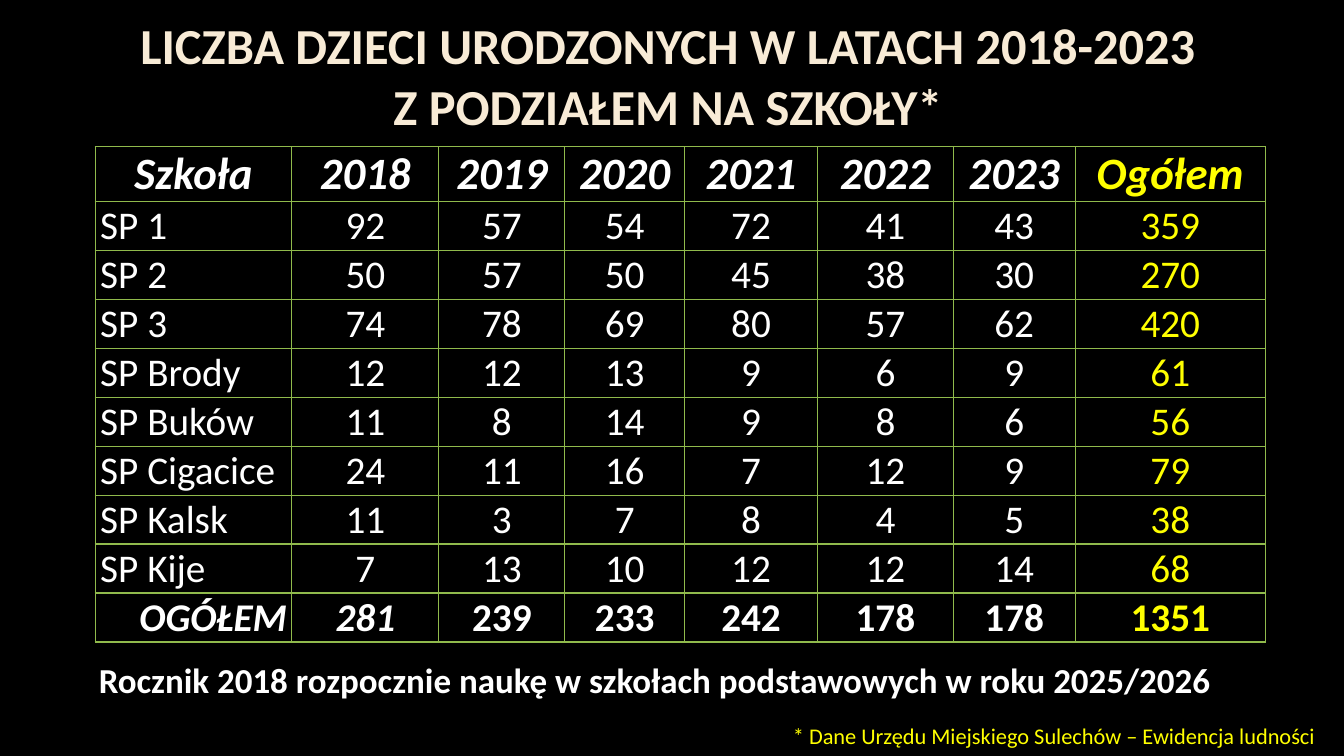
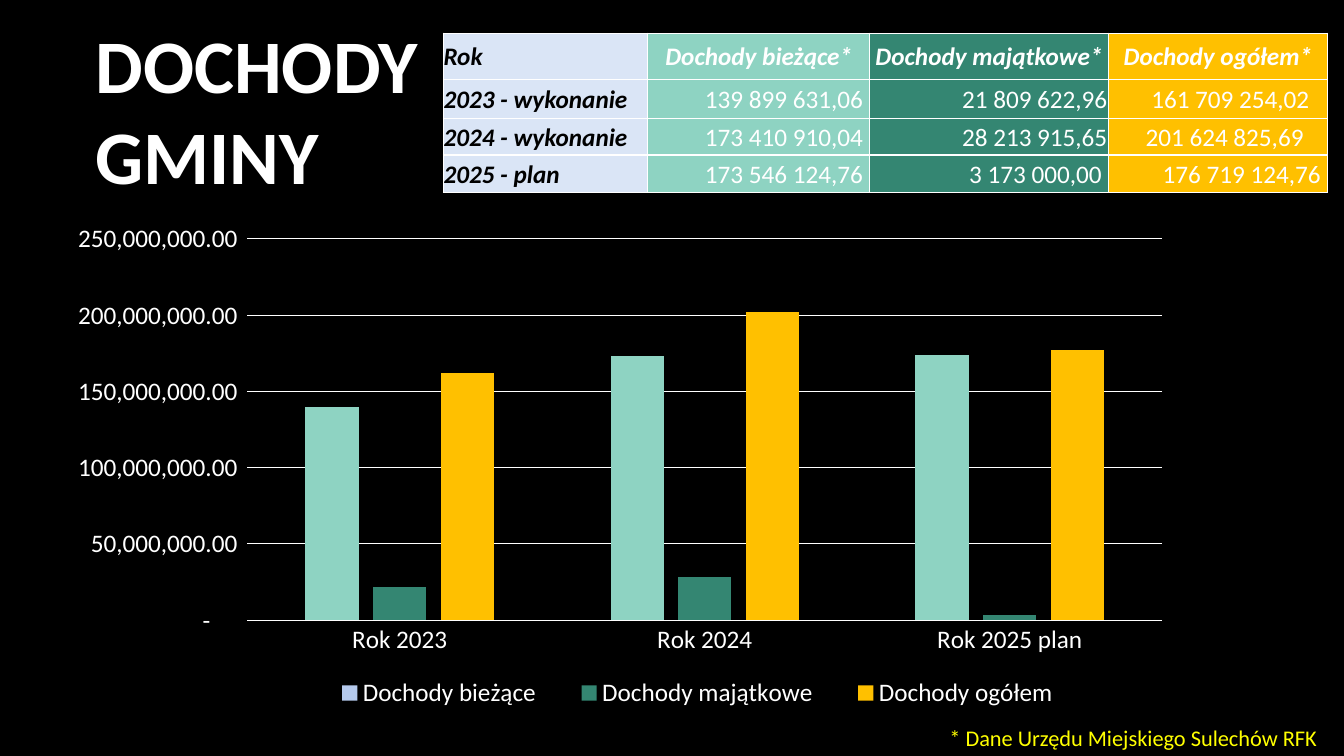
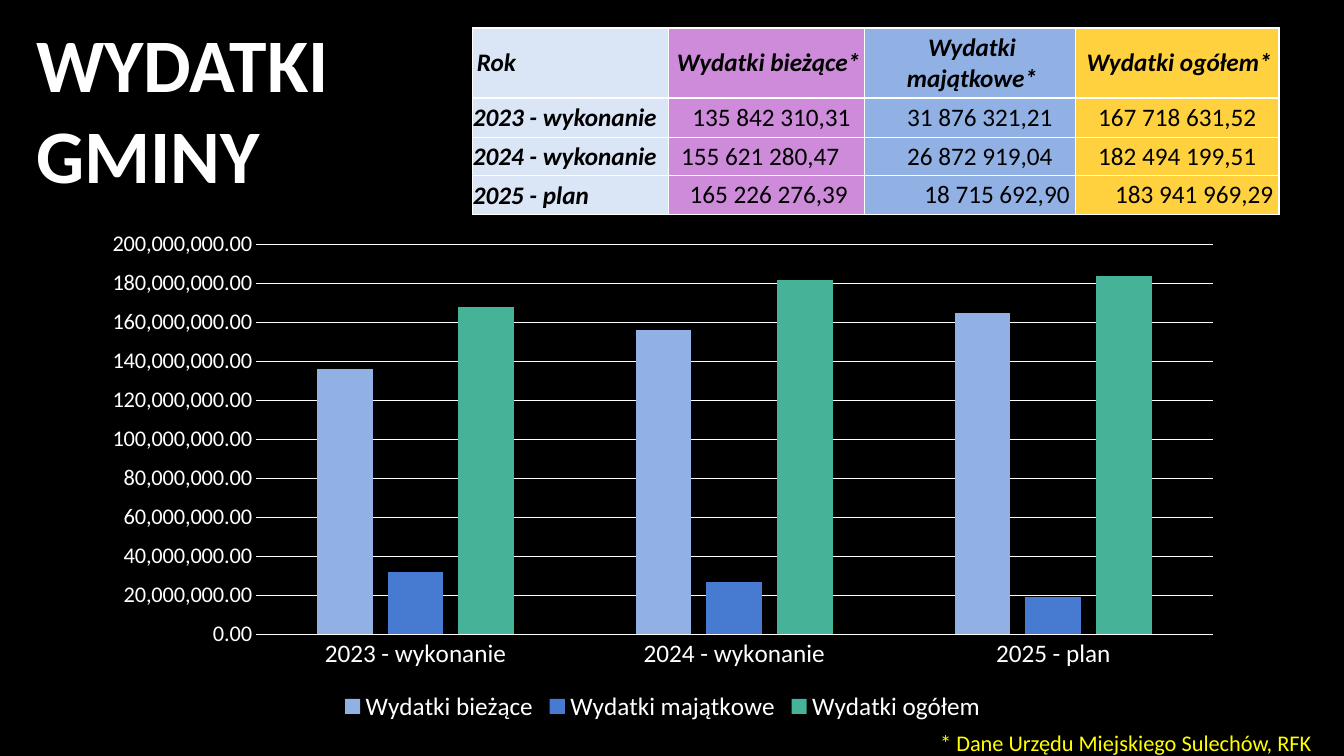
import dataclasses
from typing import Optional

import lxml.etree
import pptx
import pptx.chart.chart
import pptx.chart.data
import pptx.dml.color
import pptx.enum.chart
import pptx.enum.text
import pptx.oxml.ns
import pptx.presentation
import pptx.slide
import pptx.util

Pt = pptx.util.Pt
qn = pptx.oxml.ns.qn
ALIGN = pptx.enum.text.PP_ALIGN
ANCHOR = pptx.enum.text.MSO_ANCHOR

FONT = "Calibri"
BLACK, WHITE, YELLOW = "000000", "FFFFFF", "FFFF00"
CREAM, GREEN, PALE_BLUE = "F8EBD6", "90BA4C", "DAE5F6"
DIGIT_GAP = 4.07


@dataclasses.dataclass
class Style:
    size: float
    color: str = WHITE
    bold: bool = False
    italic: bool = False
    align: ALIGN = ALIGN.LEFT
    anchor: ANCHOR = ANCHOR.MIDDLE


@dataclasses.dataclass
class Cell:
    text: str
    style: Style
    insets: tuple[float, float, float, float]
    fill: Optional[str] = None


@dataclasses.dataclass
class Amount:
    text: str
    lead: int = 0
    trail: int = 0


@dataclasses.dataclass
class Series:
    name: str
    millions: tuple[int, ...]
    color: str
    bar_color: Optional[str] = None


@dataclasses.dataclass
class Column:
    heading: str
    fill: str
    align: ALIGN
    amounts: tuple[Amount, ...]


@dataclasses.dataclass
class BudgetChart:
    box: tuple[float, float, float, float]
    categories: tuple[str, ...]
    series: tuple[Series, ...]
    top_millions: int
    step_millions: int
    number_format: str
    value_size: float
    plot_frame: Optional[tuple[float, float, float, float]] = None
    legend_frame: Optional[tuple[float, float, float, float]] = None


@dataclasses.dataclass
class Budget:
    title: str
    title_box: tuple[float, float, float, float]
    table_at: tuple[float, float]
    widths: tuple[float, ...]
    heights: tuple[float, ...]
    ink: str
    insets: tuple[float, float, float, float]
    year_inset: float
    columns: tuple[Column, ...]
    chart: BudgetChart
    source: str
    source_right: float
    source_top: float


def rgb(color: str) -> pptx.dml.color.RGBColor:
    return pptx.dml.color.RGBColor.from_string(color)


def set_font(font, size: float, color: str = WHITE, bold: bool = False, italic: bool = False) -> None:
    font.name, font.size, font.bold, font.italic = FONT, Pt(size), bold, italic
    font.color.rgb = rgb(color)


def write(frame, text: str, style: Style) -> None:
    frame.word_wrap = True
    paragraph = frame.paragraphs[0]
    paragraph.text = text
    paragraph.alignment = style.align
    set_font(paragraph.font, style.size, style.color, style.bold, style.italic)


def add_text(slide: pptx.slide.Slide, box: tuple[float, ...], text: str, style: Style) -> None:
    frame = slide.shapes.add_textbox(*map(Pt, box)).text_frame
    frame.vertical_anchor = style.anchor
    write(frame, text, style)


def add_source(slide: pptx.slide.Slide, right: float, top: float, text: str) -> None:
    width = 440
    style = Style(16, YELLOW, align=ALIGN.RIGHT, anchor=ANCHOR.TOP)
    add_text(slide, (right - width, top, width, 26.6), text, style)


def add_slide(deck: pptx.presentation.Presentation) -> pptx.slide.Slide:
    slide = deck.slides.add_slide(deck.slide_layouts[6])
    slide.background.fill.solid()
    slide.background.fill.fore_color.rgb = rgb(BLACK)
    return slide


def set_borders(cell, color: str) -> None:
    properties = cell._tc.get_or_add_tcPr()
    for side in ("a:lnL", "a:lnR", "a:lnT", "a:lnB"):
        line = lxml.etree.SubElement(properties, qn(side), w=str(Pt(1)))
        fill = lxml.etree.SubElement(line, qn("a:solidFill"))
        lxml.etree.SubElement(fill, qn("a:srgbClr"), val=color)


def add_table(
    slide: pptx.slide.Slide,
    at: tuple[float, float],
    widths: tuple[float, ...],
    heights: tuple[float, ...],
    rows: list[list[Cell]],
    border: str,
) -> None:
    size = (sum(widths), sum(heights))
    table = slide.shapes.add_table(len(rows), len(widths), *map(Pt, at + size)).table
    table.first_row = table.horz_banding = False
    for column, width in zip(table.columns, widths):
        column.width = Pt(width)
    for row, height in zip(table.rows, heights):
        row.height = Pt(height)
    for row, entries in zip(table.rows, rows):
        for cell, entry in zip(row.cells, entries):
            left, top, right, bottom = map(Pt, entry.insets)
            cell.margin_left, cell.margin_top = left, top
            cell.margin_right, cell.margin_bottom = right, bottom
            cell.vertical_anchor = entry.style.anchor
            set_borders(cell, border)
            if entry.fill:
                cell.fill.solid()
                cell.fill.fore_color.rgb = rgb(entry.fill)
            else:
                cell.fill.background()
            write(cell.text_frame, entry.text, entry.style)


def set_layout(parent, position: int, frame: tuple[float, ...], inner: bool = False) -> None:
    for old in parent.findall(qn("c:layout")):
        parent.remove(old)
    layout = parent.makeelement(qn("c:layout"))
    parent.insert(position, layout)
    manual = lxml.etree.SubElement(layout, qn("c:manualLayout"))
    settings = [("layoutTarget", "inner")] if inner else []
    settings += [("xMode", "edge"), ("yMode", "edge")]
    settings += [(name, str(value)) for name, value in zip("xywh", frame)]
    for name, value in settings:
        lxml.etree.SubElement(manual, qn(f"c:{name}"), val=value)


def paint(target, color: str) -> None:
    target.format.fill.solid()
    target.format.fill.fore_color.rgb = rgb(color)


def style_axes(chart: pptx.chart.chart.Chart, budget: BudgetChart) -> None:
    years, amounts = chart.category_axis, chart.value_axis
    for axis, size in ((years, 18), (amounts, budget.value_size)):
        axis.major_tick_mark = axis.minor_tick_mark = pptx.enum.chart.XL_TICK_MARK.NONE
        set_font(axis.tick_labels.font, size)
    amounts.has_major_gridlines = True
    for line in (years.format.line, amounts.major_gridlines.format.line):
        line.width = Pt(0.75)
        line.color.rgb = rgb(WHITE)
    amounts.format.line.fill.background()
    amounts.minimum_scale = 0
    amounts.maximum_scale = budget.top_millions * 1_000_000
    amounts.major_unit = budget.step_millions * 1_000_000
    amounts.tick_labels.number_format = budget.number_format
    amounts.tick_labels.number_format_is_linked = False


def add_chart(slide: pptx.slide.Slide, budget: BudgetChart) -> None:
    data = pptx.chart.data.CategoryChartData()
    data.categories = budget.categories
    for series in budget.series:
        data.add_series(series.name, [value * 1_000_000 for value in series.millions])
    kind = pptx.enum.chart.XL_CHART_TYPE.COLUMN_CLUSTERED
    chart = slide.shapes.add_chart(kind, *map(Pt, budget.box), data).chart
    chart.has_title = False
    set_font(chart.font, 10)
    plot = chart.plots[0]
    plot.gap_width, plot.overlap, plot.vary_by_categories = 219, -27, False
    for bars, series in zip(plot.series, budget.series):
        paint(bars, series.color)
        if series.bar_color:
            for index in range(len(series.millions)):
                paint(bars.points[index], series.bar_color)
    style_axes(chart, budget)
    chart.has_legend = True
    chart.legend.position = pptx.enum.chart.XL_LEGEND_POSITION.BOTTOM
    chart.legend.include_in_layout = False
    set_font(chart.legend.font, 18)
    if budget.plot_frame:
        set_layout(chart._chartSpace.chart.plotArea, 0, budget.plot_frame, True)
    if budget.legend_frame:
        set_layout(chart.legend._element, 1, budget.legend_frame)


BIRTHS = {
    "SP 1": (92, 57, 54, 72, 41, 43, 359),
    "SP 2": (50, 57, 50, 45, 38, 30, 270),
    "SP 3": (74, 78, 69, 80, 57, 62, 420),
    "SP Brody": (12, 12, 13, 9, 6, 9, 61),
    "SP Buków": (11, 8, 14, 9, 8, 6, 56),
    "SP Cigacice": (24, 11, 16, 7, 12, 9, 79),
    "SP Kalsk": (11, 3, 7, 8, 4, 5, 38),
    "SP Kije": (7, 13, 10, 12, 12, 14, 68),
    "OGÓŁEM": (281, 239, 233, 242, 178, 178, 1351),
}


def births_rows() -> list[list[Cell]]:
    wide, tight = (3.6, 0, 3.6, 0), (0.72, 0.72, 0.72, 0)
    headings = ("Szkoła", *map(str, range(2018, 2024)), "Ogółem")
    ink = [WHITE] * 7 + [YELLOW]
    rows = [[
        Cell(heading, Style(32, color, True, True, ALIGN.CENTER), wide)
        for heading, color in zip(headings, ink)
    ]]
    for school, counts in BIRTHS.items():
        total = school == "OGÓŁEM"
        side = ALIGN.RIGHT if total else ALIGN.LEFT
        row = [Cell(school, Style(28, WHITE, total, total, side, ANCHOR.BOTTOM), wide)]
        for index, (count, color) in enumerate(zip(counts, ink[1:])):
            italic = total and index == 0
            style = Style(28, color, total, italic, ALIGN.CENTER, ANCHOR.BOTTOM)
            row.append(Cell(str(count), style, tight))
        rows.append(row)
    return rows


def build_births(deck: pptx.presentation.Presentation) -> None:
    slide = add_slide(deck)
    title = "LICZBA DZIECI URODZONYCH W LATACH 2018-2023\vZ PODZIAŁEM NA SZKOŁY*"
    add_text(slide, (30, 7, 894.5, 93), title, Style(36, CREAM, True, align=ALIGN.CENTER))
    widths = (140.5, 105, 90, 85.5, 95, 97, 87, 136)
    heights = (39,) + (35,) * len(BIRTHS)
    add_table(slide, (68, 104.8), widths, heights, births_rows(), GREEN)
    add_source(slide, 946.5, 512.4, "* Dane Urzędu Miejskiego Sulechów – Ewidencja ludności")
    note = "Rocznik 2018 rozpocznie naukę w szkołach podstawowych w roku 2025/2026"
    add_text(slide, (63.5, 466.5, 845, 37.5), note, Style(25, bold=True, anchor=ANCHOR.TOP))


def budget_rows(budget: Budget) -> list[list[Cell]]:
    label = Style(18, BLACK, True, True)
    left, top, right, bottom = budget.insets
    rows = [[Cell("Rok", label, (budget.year_inset, top, 0, bottom), PALE_BLUE)]]
    for year in ("2023 - wykonanie", "2024 - wykonanie", "2025 - plan"):
        rows.append([Cell(year, label, (0, 0.72, 0, 0), PALE_BLUE)])
    for column in budget.columns:
        heading = Style(18, budget.ink, True, True, ALIGN.CENTER)
        rows[0].append(Cell(column.heading, heading, budget.insets, column.fill))
        for row, amount in zip(rows[1:], column.amounts):
            insets = (left + amount.lead * DIGIT_GAP, top, right + amount.trail * DIGIT_GAP, bottom)
            style = Style(18, budget.ink, align=column.align)
            row.append(Cell(amount.text, style, insets, column.fill))
    return rows


def build_budget(deck: pptx.presentation.Presentation, budget: Budget) -> None:
    slide = add_slide(deck)
    add_text(slide, budget.title_box, budget.title, Style(54, bold=True))
    add_table(slide, budget.table_at, budget.widths, budget.heights, budget_rows(budget), WHITE)
    add_chart(slide, budget.chart)
    add_source(slide, budget.source_right, budget.source_top, budget.source)


INCOME = Budget(
    title="DOCHODY GMINY",
    title_box=(61.2, 20.9, 266.4, 113.8),
    table_at=(316.8, 23.8),
    widths=(146, 158.5, 170.5, 156.5),
    heights=(33, 28, 26, 27),
    ink=WHITE,
    insets=(0.72, 0.72, 0.72, 0),
    year_inset=0,
    columns=(
        Column("Dochody bieżące*", "8ED3C2", ALIGN.RIGHT, (
            Amount("139 899 631,06", trail=1),
            Amount("173 410 910,04", trail=1),
            Amount("173 546 124,76", trail=1),
        )),
        Column("Dochody majątkowe*", "348672", ALIGN.RIGHT, (
            Amount("21 809 622,96"),
            Amount("28 213 915,65"),
            Amount("3 173 000,00", trail=1),
        )),
        Column("Dochody ogółem*", "FFC000", ALIGN.RIGHT, (
            Amount("161 709 254,02", trail=3),
            Amount("201 624 825,69", trail=4),
            Amount("176 719 124,76", trail=1),
        )),
    ),
    chart=BudgetChart(
        box=(33.8, 127.4, 876.2, 383),
        categories=("Rok 2023", "Rok 2024", "Rok 2025 plan"),
        series=(
            Series("Dochody bieżące", (140, 173, 174), "B5CAED", "8ED3C2"),
            Series("Dochody majątkowe", (22, 28, 3), "348672"),
            Series("Dochody ogółem", (162, 202, 177), "FFC000"),
        ),
        top_millions=250,
        step_millions=50,
        number_format='_(* #,##0.00_);_(* \\(#,##0.00\\);_(* "-"??_);_(@_)',
        value_size=18,
        plot_frame=(0.163, 0.113, 0.746, 0.711),
        legend_frame=(0.21, 0.92, 0.64, 0.08),
    ),
    source="* Dane Urzędu Miejskiego Sulechów RFK",
    source_right=948,
    source_top=513.4,
)

SPENDING = Budget(
    title="WYDATKI\vGMINY",
    title_box=(18.7, 20.2, 241.9, 113.8),
    table_at=(337.7, 20),
    widths=(140, 140, 150.5, 145.5),
    heights=(50, 28, 27.5, 27.5),
    ink=BLACK,
    insets=(2.88, 2.88, 0, 2.88),
    year_inset=2.88,
    columns=(
        Column("Wydatki bieżące*", "CD8BDA", ALIGN.CENTER, (
            Amount("135 842 310,31", lead=1),
            Amount("155 621 280,47", lead=1, trail=4),
            Amount("165 226 276,39", lead=1, trail=1),
        )),
        Column("Wydatki majątkowe*", "91B0E3", ALIGN.RIGHT, (
            Amount("31 876 321,21", trail=4),
            Amount("26 872 919,04", trail=4),
            Amount("18 715 692,90", trail=1),
        )),
        Column("Wydatki ogółem*", "FFD13F", ALIGN.RIGHT, (
            Amount("167 718 631,52", trail=4),
            Amount("182 494 199,51", trail=4),
            Amount("183 941 969,29", trail=1),
        )),
    ),
    chart=BudgetChart(
        box=(64, 157.7, 818.6, 361.4),
        categories=("2023 - wykonanie", "2024 - wykonanie", "2025 - plan"),
        series=(
            Series("Wydatki bieżące", (136, 156, 165), "91B0E3"),
            Series("Wydatki majątkowe", (32, 27, 19), "477BD1"),
            Series("Wydatki ogółem", (168, 182, 184), "46B298"),
        ),
        top_millions=200,
        step_millions=20,
        number_format="#,##0.00",
        value_size=16,
    ),
    source="* Dane Urzędu Miejskiego Sulechów, RFK",
    source_right=944,
    source_top=517,
)


def main() -> None:
    deck = pptx.Presentation()
    deck.slide_width, deck.slide_height = Pt(960), Pt(540)
    build_births(deck)
    for budget in (INCOME, SPENDING):
        build_budget(deck, budget)
    deck.save("out.pptx")


if __name__ == "__main__":
    main()
